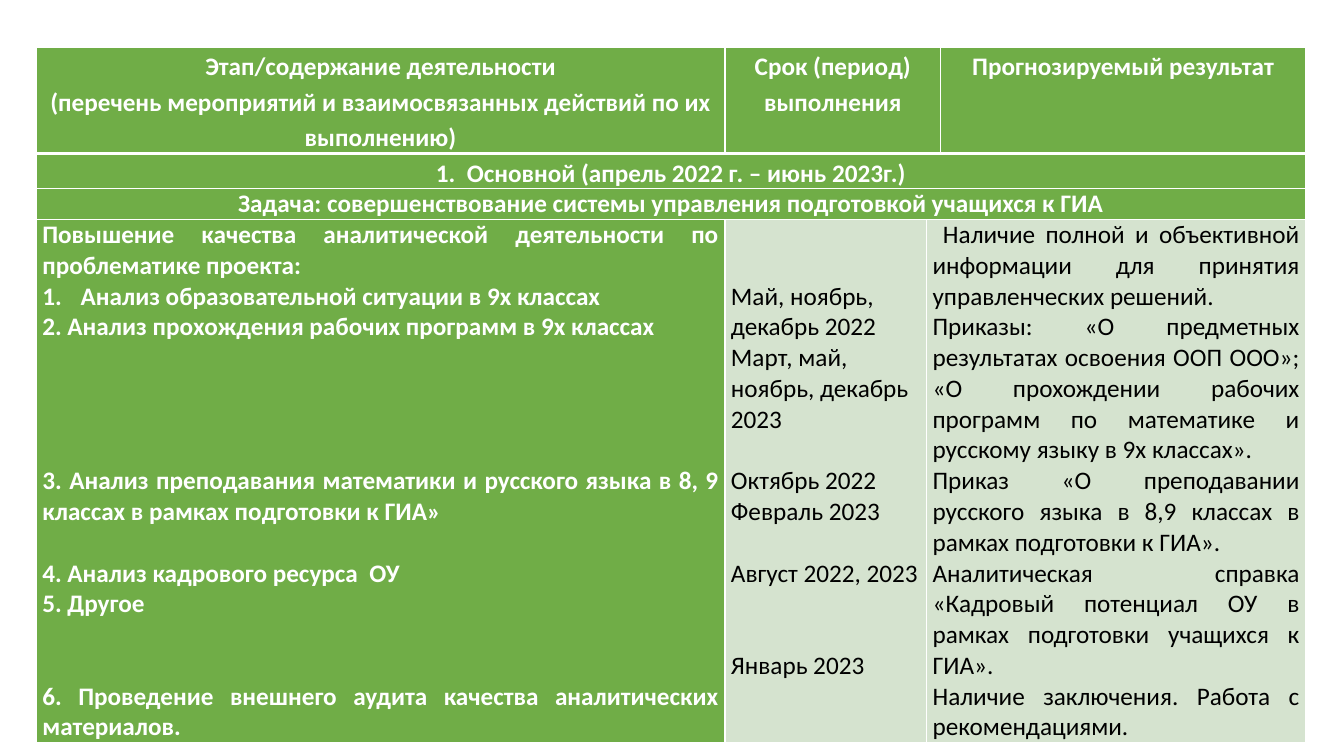
from lxml import etree
from pptx import Presentation
from pptx.dml.color import RGBColor
from pptx.enum.text import PP_ALIGN
from pptx.oxml.ns import qn
from pptx.util import Inches, Pt

LEFT, CENTER, JUSTIFY = PP_ALIGN.LEFT, PP_ALIGN.CENTER, PP_ALIGN.JUSTIFY
GREEN, PALE, WHITE, BLACK = "70AD47", "D5E3CF", "FFFFFF", "000000"
LINE = 21.97
COLUMNS = [6.83, 2, 0.14, 3.62]
ROWS = [0.93, 0.28, 0.28, 5.19]

HEADINGS = [
    (0, 0, ["Этап/содержание деятельности",
            "(перечень мероприятий и взаимосвязанных действий по их выполнению)"]),
    (1, 2, ["Срок (период) выполнения"]),
    (3, 3, ["Прогнозируемый результат"]),
]
STAGE = "1.  Основной (апрель 2022 г. – июнь 2023г.)"
TASK = "Задача: совершенствование системы управления подготовкой учащихся к ГИА"
ACTIONS = [
    ("Повышение качества аналитической деятельности по проблематике проекта:", 0),
    ("Анализ образовательной ситуации в 9х классах", 0),
    ("2. Анализ прохождения рабочих программ в 9х классах", 0),
    ("3. Анализ преподавания математики и русского языка в 8, 9 классах "
     "в рамках подготовки к ГИА»", 4),
    ("4. Анализ кадрового ресурса  ОУ", 1),
    ("5. Другое", 0),
    ("6. Проведение внешнего аудита качества аналитических материалов.", 2),
]
DATES = [
    ("Май, ноябрь, декабрь 2022", 0),
    ("Март, май, ноябрь, декабрь 2023", 0),
    ("Октябрь 2022", 1),
    ("Февраль 2023", 0),
    ("Август 2022, 2023", 1),
    ("Январь 2023", 2),
]
RESULTS = [
    (" Наличие полной и объективной информации для принятия управленческих решений.", 0),
    ("Приказы: «О предметных результатах освоения ООП ООО»; «О прохождении рабочих "
     "программ по математике и русскому языку в 9х классах».", 0),
    ("Приказ «О преподавании русского языка в 8,9 классах в рамках подготовки к ГИА».", 0),
    ("Аналитическая справка «Кадровый потенциал ОУ в рамках подготовки учащихся к ГИА».", 0),
    ("Наличие заключения. Работа с рекомендациями.", 0),
]


def colour(value):
    return RGBColor.from_string(value)


def set_borders(cell, top, bottom):
    properties = cell._tc.get_or_add_tcPr()
    widths = {"a:lnL": 1, "a:lnR": 1, "a:lnT": top, "a:lnB": bottom}
    for position, (tag, width) in enumerate(widths.items()):
        line = etree.Element(qn(tag), w=str(Pt(width)))
        fill = etree.SubElement(line, qn("a:solidFill"))
        etree.SubElement(fill, qn("a:srgbClr"), val=WHITE)
        properties.insert(position, line)


def number_paragraph(para):
    properties = para._p.get_or_add_pPr()
    properties.set("marL", str(Inches(0.38)))
    properties.set("indent", str(-Inches(0.38)))
    etree.SubElement(properties, qn("a:buAutoNum"), type="arabicPeriod")


def write_cell(cell, lines, align, ink, bold, spacing=None):
    cell.margin_left = cell.margin_right = Inches(0.06)
    cell.margin_top = cell.margin_bottom = 0
    frame = cell.text_frame
    frame.word_wrap = True
    for index, (text, gap) in enumerate(lines):
        para = frame.add_paragraph() if index else frame.paragraphs[0]
        para.alignment = align
        if spacing:
            para.line_spacing = spacing
        if gap:
            para.space_before = Pt(gap * LINE)
        span = para.add_run()
        span.text = text
        span.font.name = "Calibri"
        span.font.size = Pt(18)
        span.font.bold = bold
        span.font.color.rgb = colour(ink)


def write_headings(table):
    for first, last, texts in HEADINGS:
        cell = table.cell(0, first)
        if last > first:
            cell.merge(table.cell(0, last))
        write_cell(cell, [(text, 0) for text in texts], CENTER, WHITE, True, 1.15)


def write_banners(table):
    for row, text, spacing in [(1, STAGE, 1.15), (2, TASK, None)]:
        cell = table.cell(row, 0)
        cell.merge(table.cell(row, 3))
        write_cell(cell, [(text, 0)], CENTER, WHITE, True, spacing)


def write_plan(table):
    actions, dates, results = (table.cell(3, column) for column in range(3))
    results.merge(table.cell(3, 3))
    write_cell(actions, ACTIONS, JUSTIFY, WHITE, True)
    number_paragraph(actions.text_frame.paragraphs[1])
    write_cell(dates, DATES, LEFT, BLACK, False)
    dates.margin_top = Pt(2 * LINE)
    write_cell(results, RESULTS, JUSTIFY, BLACK, False)


def add_plan_table(page, left, top):
    table = page.shapes.add_table(
        len(ROWS), len(COLUMNS), Inches(left), Inches(top),
        Inches(sum(COLUMNS)), Inches(sum(ROWS))).table
    table.horz_banding = False
    for column, width in zip(table.columns, COLUMNS):
        column.width = Inches(width)
    for row, height in zip(table.rows, ROWS):
        row.height = Inches(height)
    for row in range(len(ROWS)):
        for column in range(len(COLUMNS)):
            cell = table.cell(row, column)
            cell.fill.solid()
            cell.fill.fore_color.rgb = colour(PALE if row == 3 and column else GREEN)
            set_borders(cell, 3 if row == 1 else 1, 3 if row == 0 else 1)
    write_headings(table)
    write_banners(table)
    write_plan(table)


def main():
    deck = Presentation()
    deck.slide_width = Inches(13.33)
    deck.slide_height = Inches(7.5)
    page = deck.slides.add_slide(deck.slide_layouts[6])
    add_plan_table(page, 0.36, 0.47)
    deck.save("out.pptx")


if __name__ == "__main__":
    main()
